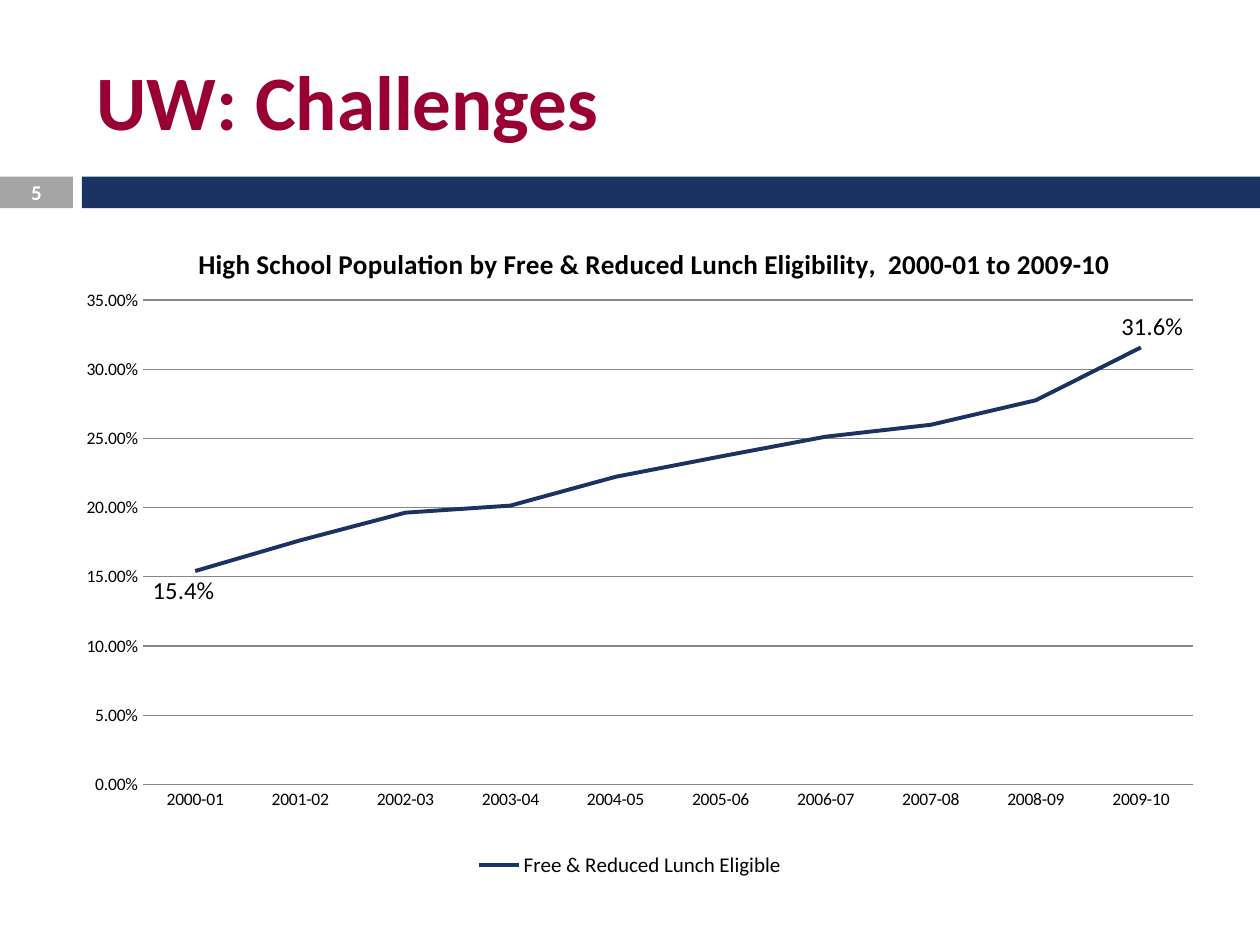
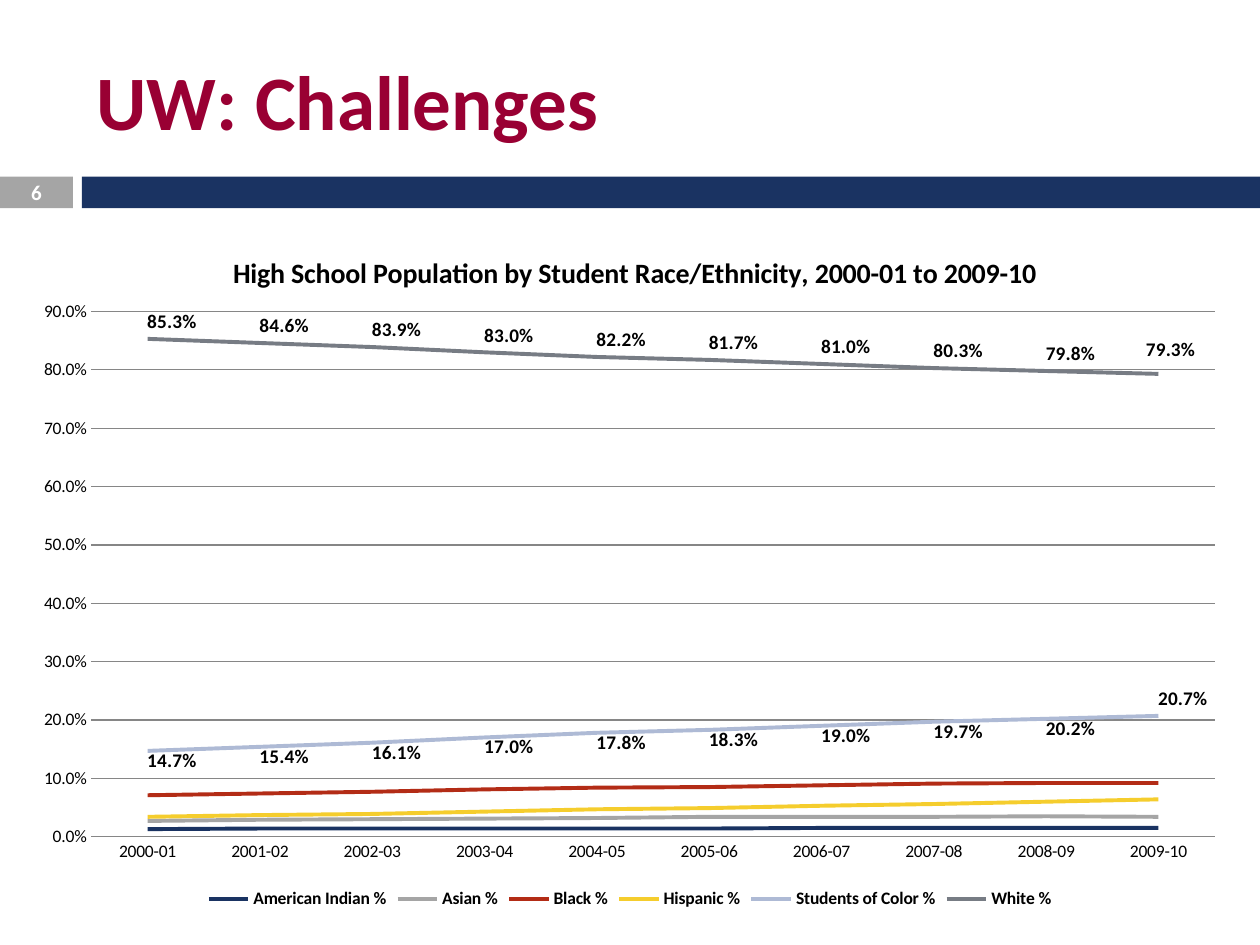
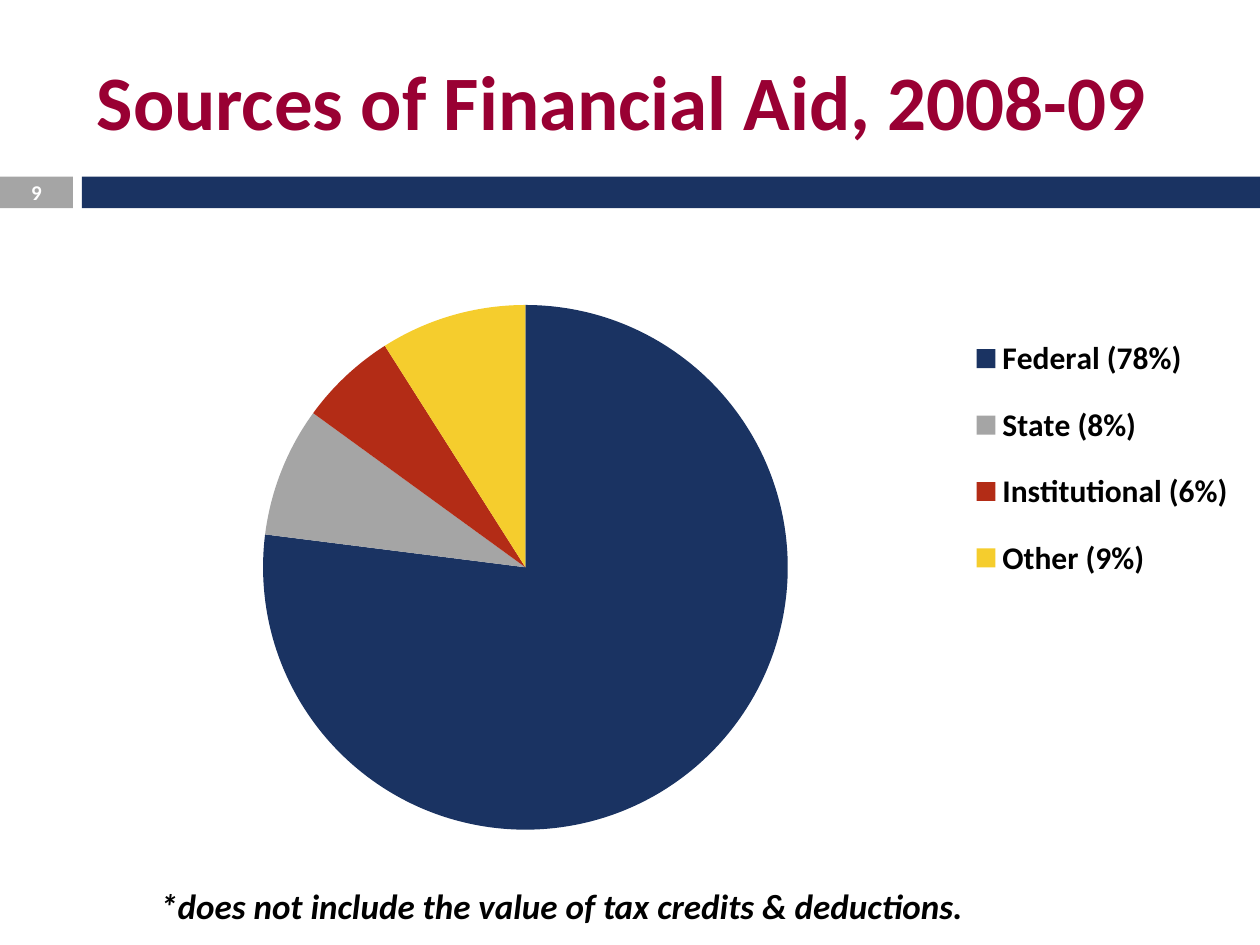
from dataclasses import dataclass

from lxml import etree
from pptx import Presentation
from pptx import util as u
from pptx.chart import data as chart_data
from pptx.dml.color import RGBColor
from pptx.enum import chart as c
from pptx.enum import shapes, text
from pptx.oxml import ns

FONT = "Calibri"
NAVY = RGBColor(0x1A, 0x33, 0x62)
GREY = RGBColor(0xA5, 0xA5, 0xA5)
RED = RGBColor(0xB3, 0x2C, 0x16)
YELLOW = RGBColor(0xF5, 0xCD, 0x2D)
PALE_BLUE = RGBColor(0xAE, 0xBA, 0xD5)
SLATE = RGBColor(0x77, 0x7C, 0x84)
GRID = RGBColor(0x86, 0x86, 0x86)
CRIMSON = RGBColor(0x99, 0x00, 0x33)
WHITE = RGBColor(0xFF, 0xFF, 0xFF)
BLACK = RGBColor(0, 0, 0)

YEARS = [f"{year}-{year % 100 + 1:02d}" for year in range(2000, 2010)]
ABOVE, BELOW = c.XL_LABEL_POSITION.ABOVE, c.XL_LABEL_POSITION.BELOW


@dataclass(frozen=True)
class Box:
    """Left, top, width and height in centimetres."""
    left: float
    top: float
    width: float
    height: float

    def lengths(self) -> list:
        return [u.Cm(n) for n in (self.left, self.top, self.width, self.height)]


@dataclass(frozen=True)
class Label:
    """Value label of one point, with its shift as fractions of the chart."""
    point: int
    position: c.XL_LABEL_POSITION
    shift: tuple[float, float]


@dataclass(frozen=True)
class Line:
    name: str
    percents: list[float]
    color: RGBColor
    labels: tuple[Label, ...] = ()


@dataclass(frozen=True)
class LineChart:
    box: Box
    title: str
    title_size: float
    title_at: tuple[float, float]
    plot: tuple[float, float, float, float]
    lines: list[Line]
    top_value: float
    step: float
    axis_format: str
    label_size: float
    label_bold: bool
    legend_size: float
    legend_bold: bool


NUMBER_BAND = Box(0, 3.56, 1.47, 0.64)
TITLE_BAND = Box(1.65, 3.56, 23.75, 0.64)
TITLE_BOX = Box(1.7, 0.64, 23.28, 2.74)
FOOTNOTE_BOX = Box(2.98, 17.74, 20, 1.04)


# Text and shared slide parts
def format_font(font, size: float, bold=False, italic=False, color=BLACK) -> None:
    font.name, font.size = FONT, u.Pt(size)
    font.bold, font.italic = bold, italic
    font.color.rgb = color


def write(shape, words: str, *, align=text.PP_ALIGN.LEFT, inset=0.25, **style) -> None:
    frame = shape.text_frame
    frame.word_wrap = True
    frame.vertical_anchor = text.MSO_ANCHOR.MIDDLE
    frame.margin_left = frame.margin_right = u.Cm(inset)
    frame.margin_top = frame.margin_bottom = 0
    paragraph = frame.paragraphs[0]
    paragraph.alignment = align
    run = paragraph.add_run()
    run.text = words
    format_font(run.font, **style)


def add_band(slide, box: Box, color: RGBColor):
    band = slide.shapes.add_shape(shapes.MSO_SHAPE.RECTANGLE, *box.lengths())
    band.shadow.inherit = False
    band.fill.solid()
    band.fill.fore_color.rgb = color
    band.line.fill.background()
    return band


def add_slide(presentation, title: str, number: int):
    slide = presentation.slides.add_slide(presentation.slide_layouts[6])
    add_band(slide, TITLE_BAND, NAVY)
    number_band = add_band(slide, NUMBER_BAND, GREY)
    write(number_band, str(number), align=text.PP_ALIGN.CENTER, inset=0,
          size=12, bold=True, color=WHITE)
    title_box = slide.shapes.add_textbox(*TITLE_BOX.lengths())
    write(title_box, title, size=44, bold=True, color=CRIMSON)
    return slide


# Chart helpers
def place(parent, position: tuple, *, after: str = "", inner=False, edge=True) -> None:
    """Give a chart part a manual layout, behind its child named in after."""
    for old in parent.findall(ns.qn("c:layout")):
        parent.remove(old)
    layout = etree.Element(ns.qn("c:layout"))
    manual = etree.SubElement(layout, ns.qn("c:manualLayout"))
    settings = [("layoutTarget", "inner")] if inner else []
    if edge:
        settings += [("xMode", "edge"), ("yMode", "edge")]
    settings += zip("xywh", position)
    for name, value in settings:
        etree.SubElement(manual, ns.qn(f"c:{name}")).set("val", str(value))
    if after:
        parent.find(ns.qn(after)).addnext(layout)
    else:
        parent.insert(0, layout)


def add_legend(chart, position, **style) -> None:
    chart.has_legend = True
    chart.legend.position = position
    chart.legend.include_in_layout = False
    format_font(chart.legend.font, **style)


def format_axis(axis) -> None:
    axis.major_tick_mark = axis.minor_tick_mark = c.XL_TICK_MARK.NONE
    format_font(axis.tick_labels.font, size=10)


def format_line(line, color: RGBColor, width: float) -> None:
    line.color.rgb = color
    line.width = u.Pt(width)


def add_line_chart(slide, spec: LineChart) -> None:
    data = chart_data.CategoryChartData(number_format="0.0%")
    data.categories = YEARS
    for line in spec.lines:
        data.add_series(line.name, [round(n / 100, 4) for n in line.percents])
    chart = slide.shapes.add_chart(
        c.XL_CHART_TYPE.LINE, *spec.box.lengths(), data).chart
    format_font(chart.font, size=10)

    # Title, plot and legend
    chart.has_title = True
    title = chart.chart_title
    run = title.text_frame.paragraphs[0].add_run()
    run.text = spec.title
    format_font(run.font, size=spec.title_size, bold=True)
    title.include_in_layout = False
    place(title._element, spec.title_at, after="c:tx")
    place(chart._chartSpace.chart.plotArea, spec.plot, inner=True)
    add_legend(chart, c.XL_LEGEND_POSITION.BOTTOM,
               size=spec.legend_size, bold=spec.legend_bold)

    # Axes
    years, values = chart.category_axis, chart.value_axis
    for axis in (years, values):
        format_axis(axis)
    format_line(years.format.line, GRID, 0.75)
    values.format.line.fill.background()
    format_line(values.major_gridlines.format.line, GRID, 0.75)
    values.minimum_scale, values.maximum_scale = 0, spec.top_value
    values.major_unit = spec.step
    values.tick_labels.number_format = spec.axis_format
    values.tick_labels.number_format_is_linked = False

    # Lines and their labels
    for series, line in zip(chart.plots[0].series, spec.lines):
        series.smooth = False
        series.marker.style = c.XL_MARKER_STYLE.NONE
        format_line(series.format.line, line.color, 2.25)
        if line.labels:
            series.data_labels.show_value = False
        for label in line.labels:
            data_label = series.points[label.point].data_label
            format_font(data_label.font, size=spec.label_size, bold=spec.label_bold)
            data_label.position = label.position
            element = series.data_labels._element.xpath(
                f"c:dLbl[c:idx/@val='{label.point}']")[0]
            place(element, label.shift, after="c:idx", edge=False)


def add_aid_pie(slide, box: Box) -> None:
    sources = {"Federal (78%)": (77, NAVY), "State (8%)": (8, GREY),
               "Institutional (6%)": (6, RED), "Other (9%)": (9, YELLOW)}
    data = chart_data.CategoryChartData()
    data.categories = list(sources)
    data.add_series("Series 1", [share for share, _ in sources.values()])
    chart = slide.shapes.add_chart(c.XL_CHART_TYPE.PIE, *box.lengths(), data).chart
    format_font(chart.font, size=10)
    chart.has_title = False
    chart.plots[0].vary_by_categories = True
    place(chart._chartSpace.chart.plotArea, (0, 0.136, 0.764, 0.847), inner=True)
    add_legend(chart, c.XL_LEGEND_POSITION.RIGHT, size=18, bold=True)
    place(chart.legend._element, (0.763, 0.146, 0.237, 0.475), after="c:legendPos")
    for index, (_, color) in enumerate(sources.values()):
        fill = chart.plots[0].series[0].points[index].format.fill
        fill.solid()
        fill.fore_color.rgb = color


# Contents
LUNCH = LineChart(
    box=Box(1.06, 4.45, 23.28, 13.34),
    title="High School Population by Free & Reduced Lunch Eligibility,  2000-01 to 2009-10",
    title_size=15.5, title_at=(0.122, 0.03), plot=(0.078, 0.12, 0.91, 0.732),
    lines=[Line("Free & Reduced Lunch Eligible",
                [15.42, 17.64, 19.64, 20.15, 22.23, 23.7, 25.13, 25.99, 27.76, 31.58],
                NAVY, (Label(0, BELOW, (-0.01, 0)), Label(9, ABOVE, (0.01, 0))))],
    top_value=0.35, step=0.05, axis_format="0.00%",
    label_size=14, label_bold=False, legend_size=12, legend_bold=False)

COLOR_LABELS = tuple(Label(i, BELOW, (0.02, -0.01)) for i in range(9))
WHITE_LABELS = tuple(Label(i, ABOVE, (0.02, 0)) for i in range(9))
ETHNICITY = LineChart(
    box=Box(0.42, 4.45, 24.56, 13.97),
    title="High School Population by Student Race/Ethnicity, 2000-01 to 2009-10",
    title_size=16, title_at=(0.17, 0.04), plot=(0.058, 0.131, 0.922, 0.758),
    lines=[
        Line("American Indian %",
             [1.3, 1.4, 1.4, 1.4, 1.4, 1.4, 1.5, 1.5, 1.5, 1.5], NAVY),
        Line("Asian %", [2.7, 2.9, 3, 3.1, 3.2, 3.4, 3.4, 3.4, 3.5, 3.4], GREY),
        Line("Black %", [7.1, 7.4, 7.7, 8.1, 8.4, 8.5, 8.8, 9.1, 9.2, 9.2], RED),
        Line("Hispanic %", [3.4, 3.7, 3.9, 4.3, 4.7, 4.9, 5.3, 5.6, 6, 6.4], YELLOW),
        Line("Students of Color %",
             [14.7, 15.4, 16.1, 17, 17.8, 18.3, 19, 19.7, 20.2, 20.7],
             PALE_BLUE, COLOR_LABELS + (Label(9, ABOVE, (0.02, 0)),)),
        Line("White %", [85.3, 84.6, 83.9, 83, 82.2, 81.7, 81, 80.3, 79.8, 79.3],
             SLATE, WHITE_LABELS + (Label(9, ABOVE, (0.01, -0.01)),)),
    ],
    top_value=0.9, step=0.1, axis_format="0.0%",
    label_size=11, label_bold=True, legend_size=10, legend_bold=True)


def main() -> None:
    presentation = Presentation()
    presentation.slide_width, presentation.slide_height = u.Cm(25.4), u.Cm(19.05)

    for number, spec in ((5, LUNCH), (6, ETHNICITY)):
        add_line_chart(add_slide(presentation, "UW: Challenges", number), spec)

    aid_slide = add_slide(presentation, "Sources of Financial Aid, 2008-09", 9)
    add_aid_pie(aid_slide, Box(1.7, 4.45, 23.28, 12.49))
    footnote = aid_slide.shapes.add_textbox(*FOOTNOTE_BOX.lengths())
    write(footnote, "*does not include the value of tax credits & deductions.",
          size=20, bold=True, italic=True)

    presentation.save("out.pptx")


if __name__ == "__main__":
    main()
